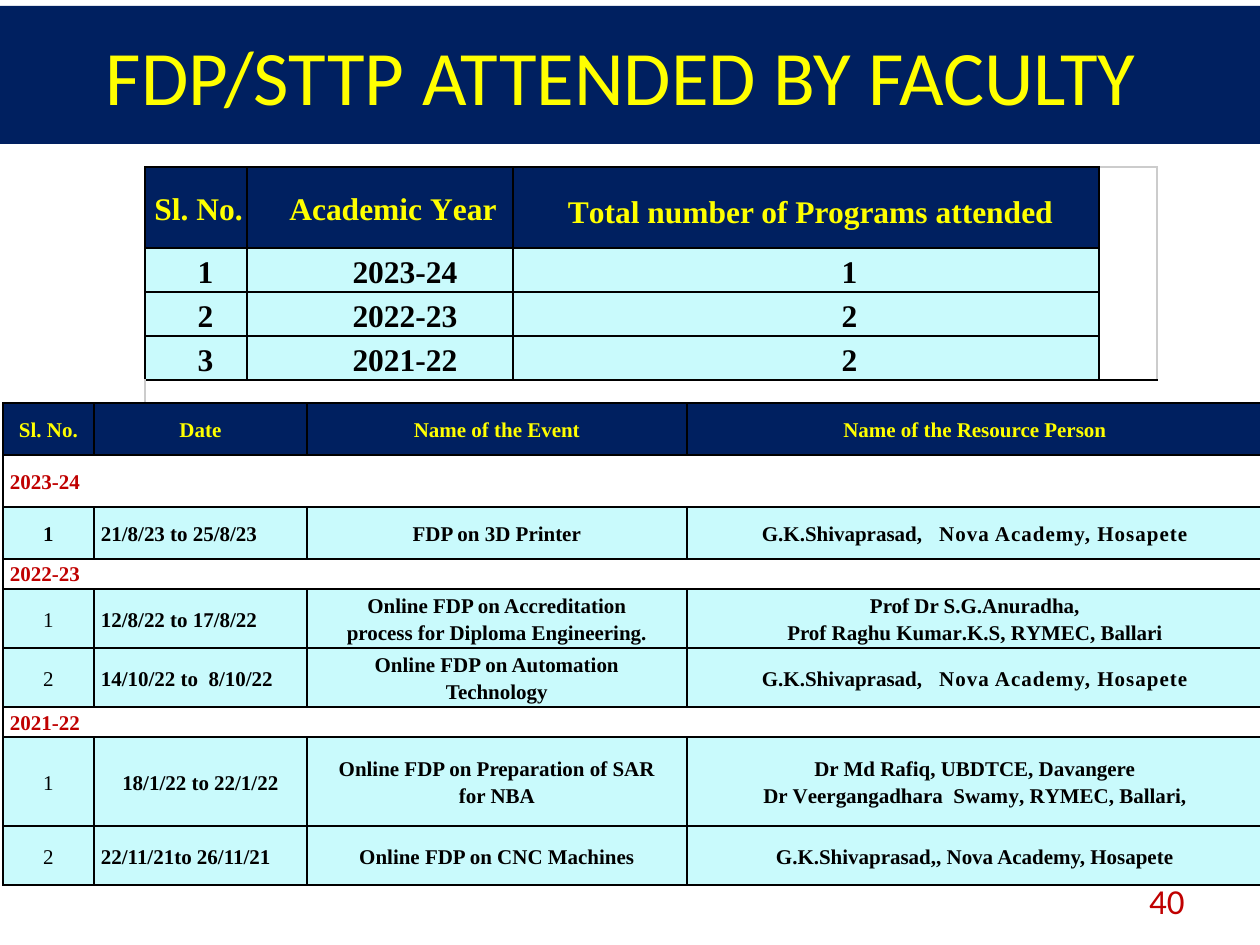
from lxml import etree
from pptx import Presentation
from pptx.dml.color import RGBColor
from pptx.enum.shapes import MSO_SHAPE
from pptx.enum.text import MSO_ANCHOR, PP_ALIGN
from pptx.oxml.ns import qn
from pptx.util import Emu, Pt

RECTANGLE = MSO_SHAPE.RECTANGLE
MIDDLE, TOP = MSO_ANCHOR.MIDDLE, MSO_ANCHOR.TOP
LEFT, CENTER, RIGHT, JUSTIFY = PP_ALIGN.LEFT, PP_ALIGN.CENTER, PP_ALIGN.RIGHT, PP_ALIGN.JUSTIFY
PX = 914400 / 126
NAVY, YELLOW, AQUA, RED = "002060", "FFFF00", "C9FAFC", "C00000"
BLACK, GREY = "000000", "CCCCCC"
SANS, SERIF = "Calibri", "Times New Roman"

SUMMARY_HEADER = ["Sl. No.", [("Academic ", 0), ("Y", -50), ("ear", 0)],
                  [("T", -60), ("otal number of Programs attended", 0)]]
SUMMARY = [("1", "2023-24", "1"), ("2", "2022-23", "2"), ("3", "2021-22", "2")]

EVENT_HEADER = ["Sl. No.", "Date", "Name of the Event", "Name of the Resource Person"]
ACADEMY = [[("G.K.Shivaprasad,  ", 0), (" Nova Academy, Hosapete", 60)]]
EVENTS = [
    ("2023-24", 52, [
        (52, "1", "21/8/23 to 25/8/23", ["FDP on 3D Printer"], ACADEMY)]),
    ("2022-23", 30, [
        (59, "1", "12/8/22 to 17/8/22",
         ["Online FDP on Accreditation", "process for Diploma Engineering."],
         ["Prof Dr S.G.Anuradha,",
          [("Prof Raghu Kuma", 0), ("r", -50), (".K.S, ", 0), ("R", -30), ("YMEC, Ballari", 0)]]),
        (59, "2", "14/10/22 to  8/10/22",
         ["Online FDP on Automation", "Technology"], ACADEMY)]),
    ("2021-22", 30, [
        (89, "1", "18/1/22 to 22/1/22",
         ["Online FDP on Preparation of SAR", "for NBA"],
         ["Dr Md Rafiq, UBDTCE, Davangere",
          [("Dr ", 0), ("V", -50), ("eergangadhara  Swam", 0), ("y", -60), (", ", 0),
           ("R", -30), ("YMEC, Ballari,", 0)]]),
        (59, "2", "22/11/21to 26/11/21", ["Online FDP on CNC Machines"],
         ["G.K.Shivaprasad,, Nova Academy, Hosapete"])]),
]


def px(value):
    return Emu(round(value * PX))


def color(value):
    return RGBColor.from_string(value)


def set_all(target, **values):
    for name, value in values.items():
        setattr(target, name, value)


def write(paragraph, content, size, ink, name=SERIF, bold=False, indent=(0, 0), **spacing):
    set_all(paragraph, **spacing)
    properties = paragraph._p.get_or_add_pPr()
    for key, value in zip(("marL", "indent"), indent):
        properties.set(key, str(px(value)))
    pieces = [(content, 0)] if isinstance(content, str) else content
    for text, tracking in pieces:
        run = paragraph.add_run()
        run.text = text
        set_all(run.font, size=Pt(size), name=name, bold=bold)
        run.font.color.rgb = color(ink)
        run._r.get_or_add_rPr().set("spc", str(tracking))


def paint(cell, borders, fill=None):
    properties = cell._tc.get_or_add_tcPr()
    for side in "LRTB":
        line = etree.SubElement(properties, qn(f"a:ln{side}"), w="12700")
        if side in borders:
            solid = etree.SubElement(line, qn("a:solidFill"))
            etree.SubElement(solid, qn("a:srgbClr"), val=borders[side])
        else:
            etree.SubElement(line, qn("a:noFill"))
    if fill:
        cell.fill.solid()
        cell.fill.fore_color.rgb = color(fill)
    else:
        cell.fill.background()


def fill_cell(cell, lines, anchor=MIDDLE, first_before=0, **style):
    cell.vertical_anchor = anchor
    for index, line in enumerate(lines):
        paragraph = cell.text_frame.add_paragraph() if index else cell.text_frame.paragraphs[0]
        before = Pt(first_before if index == 0 else 0)
        write(paragraph, line, space_before=before, **style)


def make_table(slide, left, top, columns, rows, side_margin):
    frame = slide.shapes.add_table(len(rows), len(columns), px(left), px(top),
                                   px(sum(columns)), px(sum(rows)))
    table = frame.table
    set_all(table, first_row=False, horz_banding=False)
    for column, width in zip(table.columns, columns):
        column.width = px(width)
    for row, height in zip(table.rows, rows):
        row.height = px(height)
        for cell in row.cells:
            set_all(cell, margin_left=px(side_margin), margin_right=px(side_margin),
                    margin_top=0, margin_bottom=0)
    return table


def add_title(slide, left, top, width, height):
    banner = slide.shapes.add_shape(RECTANGLE, px(left), px(top), px(width), px(height))
    banner.shadow.inherit = False
    banner.fill.solid()
    banner.fill.fore_color.rgb = color(NAVY)
    banner.line.fill.background()
    set_all(banner.text_frame, word_wrap=True, vertical_anchor=MIDDLE)
    write(banner.text_frame.paragraphs[0], "FDP/STTP ATTENDED BY FACULTY ", 44, YELLOW,
          name=SANS, alignment=CENTER)


def add_summary(slide, left, top):
    table = make_table(slide, left, top, [102, 266, 586, 58], [81] + [44] * 4, 0)
    last_row, last_column = len(SUMMARY) + 1, 3
    style = dict(size=18, bold=True, alignment=CENTER, space_after=Pt(10))
    header_indents = [(5, 0), (26, 0), (59, -50)]
    body_indents = [(19, 0), (50, 0), (87, 0)]
    for row, texts in enumerate([SUMMARY_HEADER] + SUMMARY):
        for column, text in enumerate(texts):
            cell = table.cell(row, column)
            paint(cell, dict.fromkeys("LRTB", BLACK), AQUA if row else NAVY)
            tall = row == 0 and column == 2
            fill_cell(cell, [text], ink=BLACK if row else YELLOW,
                      indent=(body_indents if row else header_indents)[column],
                      first_before=1.3 if row else 3.4 if tall else 0,
                      line_spacing=1.29 if tall else 1.15, **style)
        edges = {"L": BLACK, "R": GREY}
        if row == 0:
            edges["T"] = GREY
        if row == last_row - 1:
            edges["B"] = BLACK
        paint(table.cell(row, last_column), edges)
    for column in range(last_column + 1):
        edges = {"T": BLACK, "B": GREY}
        if column == 0:
            edges["L"] = GREY
        if column == last_column:
            edges["R"] = GREY
        paint(table.cell(last_row, column), edges)
    table.cell(0, last_column).merge(table.cell(last_row - 1, last_column))
    table.cell(last_row, 0).merge(table.cell(last_row, last_column))


def add_events(slide, left, top):
    heights = [52]
    for _, height, events in EVENTS:
        heights += [height] + [event[0] for event in events]
    table = make_table(slide, left, top, [91, 213, 380, 576], heights, 7)
    style = dict(size=12, line_spacing=1.15)
    frame = dict.fromkeys("LRTB", BLACK)
    for column, text in enumerate(EVENT_HEADER):
        paint(table.cell(0, column), frame, NAVY)
        fill_cell(table.cell(0, column), [text], ink=YELLOW, bold=True, alignment=CENTER, **style)
    row = 1
    for year, _, events in EVENTS:
        for column in range(4):
            edges = {"T": BLACK, "B": BLACK}
            if column in (0, 3):
                edges["R" if column else "L"] = BLACK
            paint(table.cell(row, column), edges)
        table.cell(row, 0).merge(table.cell(row, 3))
        justified = year == "2022-23"
        fill_cell(table.cell(row, 0), [year], ink=RED, bold=True,
                  anchor=TOP if justified else MIDDLE,
                  alignment=JUSTIFY if justified else LEFT, **style)
        row += 1
        for _, number, date, event, people in events:
            centered_date = date.startswith("18/1/22")
            for column, lines in enumerate([[number], [date], event, people]):
                cell = table.cell(row, column)
                paint(cell, frame, AQUA)
                fill_cell(cell, lines, ink=BLACK, bold=column > 0 or year == "2023-24",
                          alignment=LEFT if column == 1 and not centered_date else CENTER,
                          first_before=1.3 if column == 3 and len(lines) > 1 else 0, **style)
            row += 1


def add_page_number(slide, left, top, width, height):
    box = slide.shapes.add_textbox(px(left), px(top), px(width), px(height))
    set_all(box.text_frame, word_wrap=True, vertical_anchor=MIDDLE)
    write(box.text_frame.paragraphs[0], "40", 20, RED, name=SANS, alignment=RIGHT)


def main():
    presentation = Presentation()
    set_all(presentation, slide_width=px(1260), slide_height=px(945))
    slide = presentation.slides.add_slide(presentation.slide_layouts[6])
    add_title(slide, 0, 6, 1260, 138)
    add_summary(slide, 145, 167)
    add_events(slide, 3, 403)
    add_page_number(slide, 903, 876, 294, 50)
    presentation.save("out.pptx")


if __name__ == "__main__":
    main()
